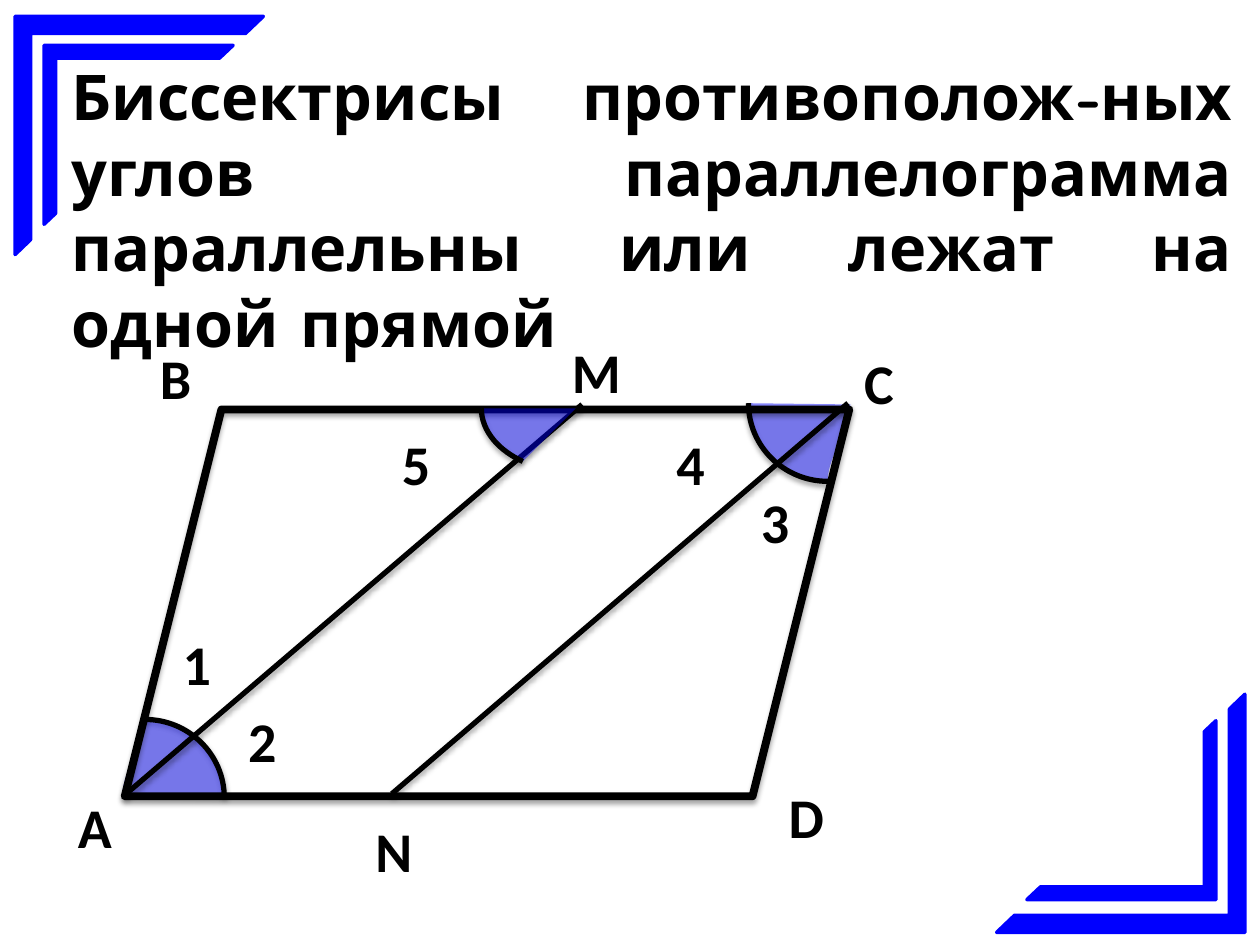
import pptx
import pptx.util
import pptx.dml.color
import pptx.enum.shapes
import pptx.enum.text
import pptx.oxml.ns
import lxml.etree

Inches, Pt = pptx.util.Inches, pptx.util.Pt
SHAPE = pptx.enum.shapes.MSO_SHAPE
COLORS = {"ink": "000000", "blue": "0000FF"}
TITLE = ("Биссектрисы противополож-ных углов параллелограмма "
         "параллельны или лежат на одной прямой")

# Angle sector at vertex A, as offsets in inches from that vertex
VERTEX = (0, 0)
ARC_START, ARC_END = (0.18, -0.61), (0.81, 0.01)
ARC = [(0.53, -0.61), (0.81, -0.33), ARC_END]
SIDE = [(0, -0.21), (0.18, -0.4), ARC_START]

# Left and top of each label, in inches from the parallelogram's box
LABELS = {
    "А": (-0.47, 2.99), "B": (0.18, -0.57), "C": (5.77, -0.53), "D": (5.17, 2.91),
    "M": (3.45, -0.62), "N": (1.89, 3.18),
    "1": (0.36, 1.7), "2": (0.88, 2.31), "3": (4.95, 0.57),
    "4": (4.28, 0.11), "5": (2.1, 0.11),
}


def rgb(name):
    return pptx.dml.color.RGBColor.from_string(COLORS[name])


def child(parent, tag, **attributes):
    attributes = {key: str(value) for key, value in attributes.items()}
    return lxml.etree.SubElement(parent, pptx.oxml.ns.qn(tag), attributes)


def set_fill(shape, color, opacity=100):
    shape.fill.solid()
    shape.fill.fore_color.rgb = rgb(color)
    if opacity < 100:
        solid = shape._element.spPr.find(pptx.oxml.ns.qn("a:solidFill"))
        child(solid[0], "a:alpha", val=opacity * 1000)


def set_line(shape, color, width):
    shape.line.color.rgb = rgb(color)
    shape.line.width = Pt(width)


def add_shadow(shape):
    """Soft shadow straight below; call after the line is set."""
    effects = child(shape._element.spPr, "a:effectLst")
    shadow = child(effects, "a:outerShdw", blurRad=Pt(3.1), dist=Pt(1.8),
                   dir=5400000, rotWithShape=0)
    child(child(shadow, "a:srgbClr", val=COLORS["ink"]), "a:alpha", val=35000)


def add_text(slide, text, box, size, font, wrap=False, align=None):
    text_box = slide.shapes.add_textbox(*(Inches(v) for v in box))
    frame = text_box.text_frame
    frame.word_wrap = wrap
    frame.auto_size = pptx.enum.text.MSO_AUTO_SIZE.SHAPE_TO_FIT_TEXT
    paragraph = frame.paragraphs[0]
    paragraph.alignment = align
    run = paragraph.add_run()
    run.text = text
    run.font.size, run.font.name, run.font.bold = Pt(size), font, True
    run.font.color.rgb = rgb("ink")
    return run


def add_title(slide, box):
    run = add_text(slide, TITLE, box, 36, "Comic Neue", wrap=True,
                   align=pptx.enum.text.PP_ALIGN.JUSTIFY)
    properties = run.font._element
    outline = child(properties, "a:ln", w=Pt(0.9))
    child(child(outline, "a:solidFill"), "a:srgbClr", val=COLORS["ink"])
    properties.insert(0, outline)


def add_corners(slide, *corners):
    """Two nested half frames in each corner, all in one group."""
    group = slide.shapes.add_group_shape()
    for rotation, boxes in corners:
        for box in boxes:
            frame = group.shapes.add_shape(SHAPE.HALF_FRAME, *(Inches(v) for v in box))
            frame.adjustments[0], frame.adjustments[1] = 0.072, 0.065
            frame.rotation = rotation
            set_fill(frame, "blue")
            set_line(frame, "blue", 2)
            frame.shadow.inherit = False


def add_sector(slide, vertex, sign):
    """Tinted angle sector with an outlined arc; sign -1 turns it half a turn."""
    def place(point):
        return tuple(Inches(base + sign * offset) for base, offset in zip(vertex, point))

    builder = slide.shapes.build_freeform(*place(ARC_START))
    builder.add_line_segments([place(ARC_END), place(VERTEX)])
    sector = builder.convert_to_shape()

    # Curved paths: a filled sector without line, then the bare arc
    paths = sector._element.spPr.find(".//" + pptx.oxml.ns.qn("a:pathLst"))
    paths.clear()
    tint_steps = [("moveTo", [ARC_START]), ("cubicBezTo", ARC),
                  ("lnTo", [VERTEX]), ("cubicBezTo", SIDE), ("close", [])]
    for steps, hidden in ((tint_steps, {"stroke": 0}), (tint_steps[:2], {"fill": "none"})):
        outline = child(paths, "a:path", w=sector.width, h=sector.height, **hidden)
        for tag, points in steps:
            step = child(outline, "a:" + tag)
            for x, y in map(place, points):
                child(step, "a:pt", x=x - sector.left, y=y - sector.top)

    set_fill(sector, "blue", 45)
    set_line(sector, "ink", 3)
    add_shadow(sector)


def add_bisector(slide, start, end):
    line = slide.shapes.add_connector(pptx.enum.shapes.MSO_CONNECTOR.STRAIGHT,
                                      *(Inches(v) for v in start + end))
    set_line(line, "ink", 3)
    add_shadow(line)


def add_diagram(slide, left, top, width, height):
    right, bottom = left + width, top + height
    add_sector(slide, (right + 0.01, top - 0.04), -1)
    add_sector(slide, (left - 0.02, bottom), 1)

    parallelogram = slide.shapes.add_shape(
        SHAPE.PARALLELOGRAM, *(Inches(v) for v in (left, top, width, height)))
    parallelogram.fill.background()
    set_line(parallelogram, "ink", 4.5)
    add_shadow(parallelogram)

    add_bisector(slide, (left, bottom - 0.01), (left + 3.63, top - 0.04))
    add_bisector(slide, (left + 2.12, bottom - 0.02), (right - 0.01, top - 0.05))

    angle_m = slide.shapes.add_shape(
        SHAPE.ARC, Inches(left + 2.83), Inches(top - 0.52), Inches(1.5), Inches(1.02))
    angle_m.adjustments[0], angle_m.adjustments[1] = 188.953, 0
    angle_m.rotation = 180
    set_fill(angle_m, "blue", 45)
    set_line(angle_m, "ink", 3)
    add_shadow(angle_m)

    for label, (dx, dy) in LABELS.items():
        add_text(slide, label, (left + dx, top + dy, 0.45, 0.64), 32, "Calibri")


def main():
    deck = pptx.Presentation()
    deck.slide_width, deck.slide_height = Inches(10), Inches(7.5)
    slide = deck.slides.add_slide(deck.slide_layouts[6])
    add_corners(slide,
                (0, [(0.12, 0.13, 1.97, 1.89), (0.35, 0.36, 1.5, 1.42)]),
                (180, [(7.91, 5.51, 1.97, 1.89), (8.15, 5.72, 1.5, 1.42)]))
    add_title(slide, (0.47, 0.41, 9.41, 3.74))
    add_diagram(slide, 0.99, 3.25, 5.75, 3.07)
    deck.save("out.pptx")


if __name__ == "__main__":
    main()
